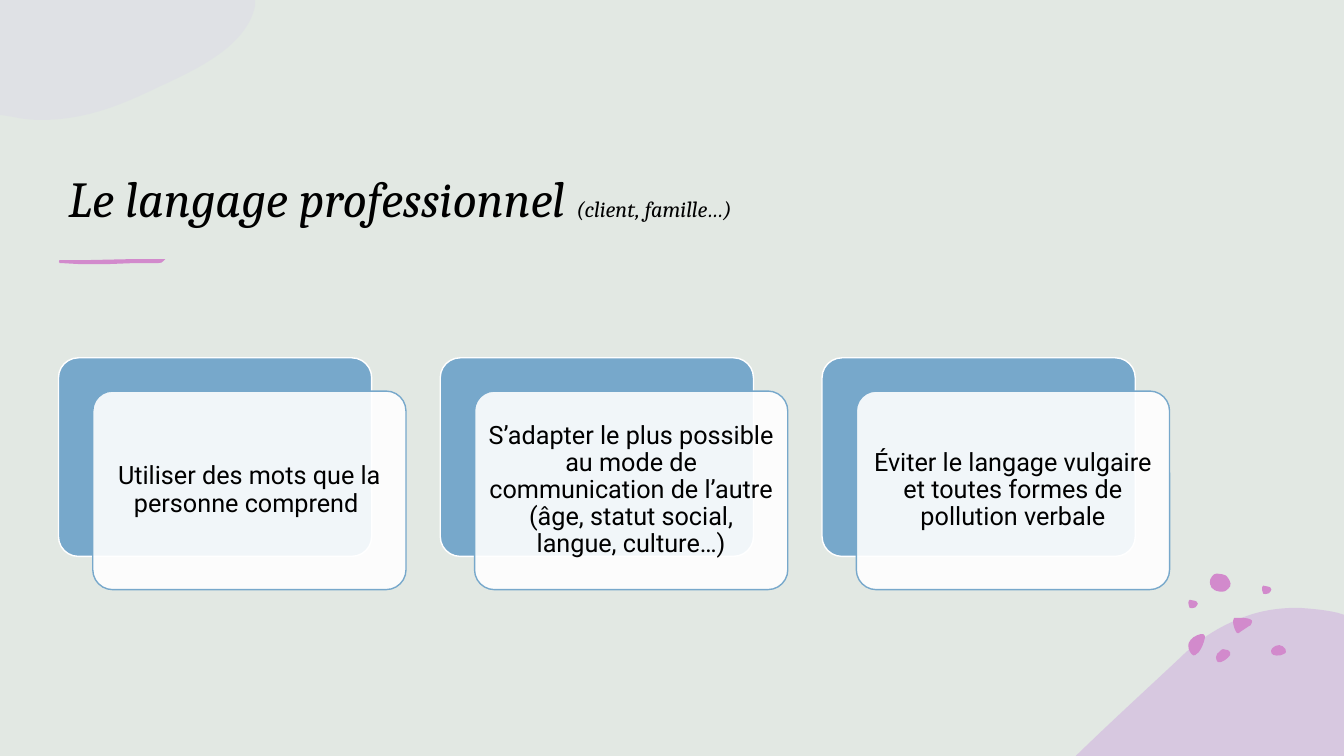
from dataclasses import dataclass

from lxml.etree import SubElement
from pptx import Presentation
from pptx.dml.color import RGBColor
from pptx.enum.shapes import MSO_SHAPE
from pptx.enum.text import MSO_ANCHOR, PP_ALIGN
from pptx.oxml.ns import qn
from pptx.util import Inches, Pt


@dataclass(frozen=True)
class Theme:
    background: str = "E2E8E3"
    lavender: str = "D7D0ED"
    lilac: str = "CDA9DE"
    pink: str = "D28ACC"
    blue: str = "77A8CB"
    white: str = "FFFFFF"
    text: str = "000000"
    title_font: str = "Cambria"
    body_font: str = "Roboto"
    title_size: int = 36
    subtitle_size: int = 16
    body_size: int = 18


THEME = Theme()

# An outline is a start point, then lines (x, y) and curves (two controls and an end).
TOP_BLOB = [
    (0, 0), (2.53, 0), (2.53, 0.06), (2.45, 0.44, 2, 0.67, 1.58, 0.86),
    (1.23, 1.03, 0.86, 1.19, 0.41, 1.19), (0.31, 1.19, 0.22, 1.18, 0.13, 1.16), (0, 1.14),
]
BOTTOM_BLOB = [
    (2.21, 0), (2.34, 0.01, 2.47, 0.02, 2.6, 0.05), (2.66, 0.07), (2.66, 1.47), (0, 1.47),
    (0.01, 1.46), (0.35, 1.13, 0.7, 0.81, 1.02, 0.51), (1.24, 0.29, 1.47, 0.16, 1.7, 0.08),
    (1.87, 0.02, 2.04, 0, 2.21, 0),
]
BRUSH_STROKE = [
    (0.01, 0.01), (0.3, 0.01), (0.75, 0), (1.06, 0), (1.03, 0.01, 1.05, 0.04, 0.99, 0.04),
    (0.75, 0.04), (0.49, 0.05), (0.21, 0.05), (0.03, 0.04), (0, 0.05, 0, 0.01, 0.01, 0.01),
]
SMALL_PEBBLE = [
    (0.01, 0.05), (0.01, 0.05, 0, 0.01, 0.02, 0), (0.04, 0, 0.05, 0, 0.07, 0.01),
    (0.08, 0.01, 0.1, 0.02, 0.1, 0.04), (0.1, 0.05, 0.09, 0.06, 0.08, 0.07),
    (0.08, 0.07, 0.08, 0.08, 0.06, 0.08), (0.05, 0.08, 0.03, 0.09, 0.02, 0.08),
    (0.01, 0.06, 0.01, 0.06, 0.01, 0.05),
]
# Each pebble: left, top, outline
PEBBLES = [
    (0.28, 0.75, [
        (0.07, 0), (0.09, 0, 0.1, 0, 0.12, 0.01), (0.14, 0.02, 0.15, 0.04, 0.14, 0.06),
        (0.12, 0.09, 0.06, 0.14, 0.02, 0.13), (0.01, 0.12, 0, 0.1, 0, 0.08),
        (0, 0.06, 0.02, 0.03, 0.04, 0.02), (0.05, 0.01, 0.06, 0, 0.07, 0)]),
    (0.01, 0.6, [
        (0.12, 0), (0.14, 0, 0.16, 0, 0.16, 0.02), (0.16, 0.03, 0.16, 0.03, 0.16, 0.04),
        (0.15, 0.09, 0.13, 0.14, 0.1, 0.18), (0.08, 0.2, 0.05, 0.23, 0.03, 0.2),
        (0, 0.17, -0.01, 0.12, 0, 0.09), (0.01, 0.06, 0.03, 0.05, 0.05, 0.03),
        (0.06, 0.03, 0.09, 0, 0.12, 0)]),
    (0.83, 0.71, [
        (0.08, 0), (0.1, 0, 0.13, 0.02, 0.14, 0.04), (0.15, 0.06, 0.15, 0.08, 0.12, 0.09),
        (0.09, 0.11, 0.01, 0.11, 0, 0.08), (-0.01, 0.06, 0, 0.04, 0.01, 0.03),
        (0.03, 0.01, 0.05, 0, 0.08, 0)]),
    (0.22, 0, [
        (0.01, 0.12), (0, 0.12, -0.01, 0.06, 0.02, 0.03), (0.04, 0.01, 0.04, 0, 0.07, 0),
        (0.1, 0, 0.14, 0.01, 0.16, 0.02), (0.18, 0.04, 0.22, 0.09, 0.2, 0.13),
        (0.17, 0.16, 0.16, 0.18, 0.12, 0.18), (0.09, 0.18, 0.04, 0.17, 0.03, 0.15),
        (0.01, 0.14, 0.01, 0.13, 0.01, 0.12)]),
    (0.73, 0.12, SMALL_PEBBLE),
    (0, 0.26, SMALL_PEBBLE),
    (0.45, 0.44, [
        (0.05, 0), (0.11, 0, 0.22, 0, 0.18, 0.06), (0.18, 0.07, 0.17, 0.08, 0.16, 0.08),
        (0.13, 0.1, 0.1, 0.12, 0.07, 0.14), (0.06, 0.15, 0.05, 0.16, 0.04, 0.15),
        (0.03, 0.14), (0.01, 0.1, 0, 0.07, 0, 0.03), (0, 0.02, 0, 0.01, 0.01, 0), (0.05, 0)]),
]
CARD_TEXTS = [
    "Utiliser des mots que la personne comprend ",
    "S’adapter le plus possible au mode de communication de l’autre "
    "(âge, statut social, langue, culture…)",
    "Éviter le langage vulgaire et toutes formes de pollution verbale",
]


def paint(shape, fill, opacity=100, line=None):
    shape.shadow.inherit = False
    shape.fill.solid()
    shape.fill.fore_color.rgb = RGBColor.from_string(fill)
    if opacity < 100:
        color = shape.fill._xPr.find(qn("a:solidFill"))[0]
        SubElement(color, qn("a:alpha"), val=str(opacity * 1000))
    if line:
        shape.line.color.rgb = RGBColor.from_string(line)
        shape.line.width = Pt(1)
    else:
        shape.line.fill.background()


def bend_curves(shape, segments):
    """Merge the three lines drawn for each curve into one cubic segment."""
    geometry = next(shape._element.iter(qn("a:path")))
    lines = iter(geometry.findall(qn("a:lnTo")))
    for segment in segments:
        first = next(lines)
        if len(segment) == 6:
            first.tag = qn("a:cubicBezTo")
            for _ in range(2):
                line = next(lines)
                first.append(line[0])
                geometry.remove(line)


def add_outline(slide, left, top, outline, fill, opacity=100):
    points = [(Inches(left + x), Inches(top + y))
              for segment in outline for x, y in zip(segment[::2], segment[1::2])]
    builder = slide.shapes.build_freeform(*points[0])
    builder.add_line_segments(points[1:], close=True)
    shape = builder.convert_to_shape()
    bend_curves(shape, outline[1:])
    paint(shape, fill, opacity)


def add_backdrop(slide, width, height):
    backdrop = slide.shapes.add_shape(MSO_SHAPE.RECTANGLE, 0, 0, width, height)
    paint(backdrop, THEME.background)
    add_outline(slide, 0, 0, TOP_BLOB, THEME.lavender, 25)


def add_title(slide, left, top, width, height):
    box = slide.shapes.add_textbox(Inches(left), Inches(top), Inches(width), Inches(height))
    frame = box.text_frame
    frame.word_wrap = True
    frame.vertical_anchor = MSO_ANCHOR.BOTTOM
    paragraph = frame.paragraphs[0]
    paragraph.font.name = THEME.title_font
    paragraph.font.italic = True
    paragraph.font.color.rgb = RGBColor.from_string(THEME.text)
    for text, size in (("Le langage professionnel ", THEME.title_size),
                       ("(client, famille…)", THEME.subtitle_size)):
        run = paragraph.add_run()
        run.text = text
        run.font.size = Pt(size)
    add_outline(slide, left, top + height + 0.26, BRUSH_STROKE, THEME.pink)


def add_pebbles(slide, left, top):
    for x, y, outline in PEBBLES:
        add_outline(slide, left + x, top + y, outline, THEME.pink)


def add_card(slide, left, top, width, height, text):
    """Place a blue panel with a translucent text panel shifted over it."""
    shift_x, shift_y = 0.34, 0.33
    panels = ((0, 0, THEME.blue, 100, THEME.white),
              (shift_x, shift_y, THEME.white, 90, THEME.blue))
    for x, y, fill, opacity, line in panels:
        panel = slide.shapes.add_shape(
            MSO_SHAPE.ROUNDED_RECTANGLE, Inches(left + x), Inches(top + y),
            Inches(width - shift_x), Inches(height - shift_y))
        panel.adjustments[0] = 0.1
        paint(panel, fill, opacity, line)
    frame = panel.text_frame
    frame.word_wrap = True
    frame.vertical_anchor = MSO_ANCHOR.MIDDLE
    frame.margin_left = frame.margin_right = Inches(0.07)
    frame.margin_top = frame.margin_bottom = Inches(0.07)
    paragraph = frame.paragraphs[0]
    paragraph.text = text
    paragraph.alignment = PP_ALIGN.CENTER
    paragraph.line_spacing = 0.9
    paragraph.font.name = THEME.body_font
    paragraph.font.size = Pt(THEME.body_size)
    paragraph.font.color.rgb = RGBColor.from_string(THEME.text)


def add_cards(slide, left, top, width, height):
    gap = 0.34
    card_width = (width - gap * (len(CARD_TEXTS) - 1)) / len(CARD_TEXTS)
    for index, text in enumerate(CARD_TEXTS):
        add_card(slide, left + index * (card_width + gap), top, card_width, height, text)


def main():
    presentation = Presentation()
    presentation.slide_width, presentation.slide_height = Inches(13.33), Inches(7.5)
    slide = presentation.slides.add_slide(presentation.slide_layouts[6])
    slide.background.fill.solid()
    slide.background.fill.fore_color.rgb = RGBColor.from_string(THEME.background)
    add_backdrop(slide, presentation.slide_width, presentation.slide_height)
    add_title(slide, 0.58, 0.86, 11.02, 1.45)
    add_outline(slide, 10.67, 6.03, BOTTOM_BLOB, THEME.lilac, 50)
    add_pebbles(slide, 11.78, 5.69)
    add_cards(slide, 0.58, 3.55, 11.02, 2.3)
    presentation.save("out.pptx")


if __name__ == "__main__":
    main()
